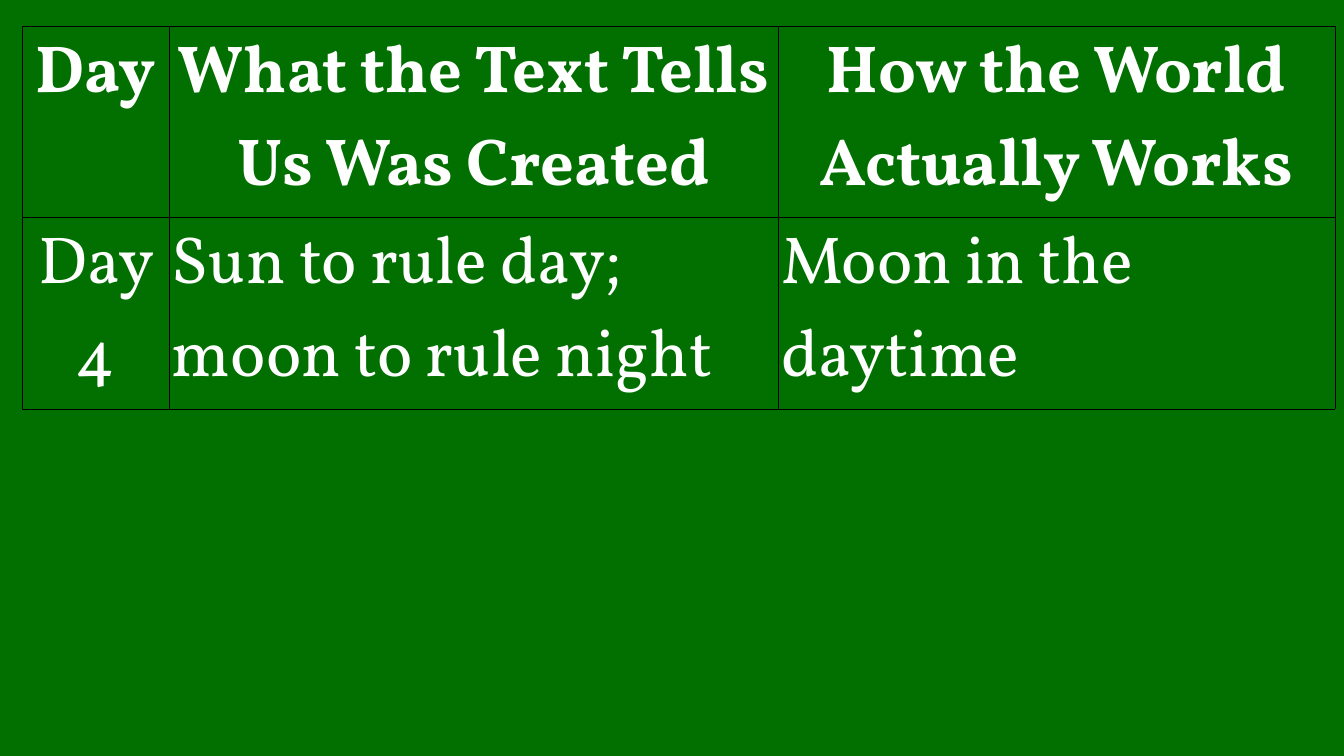
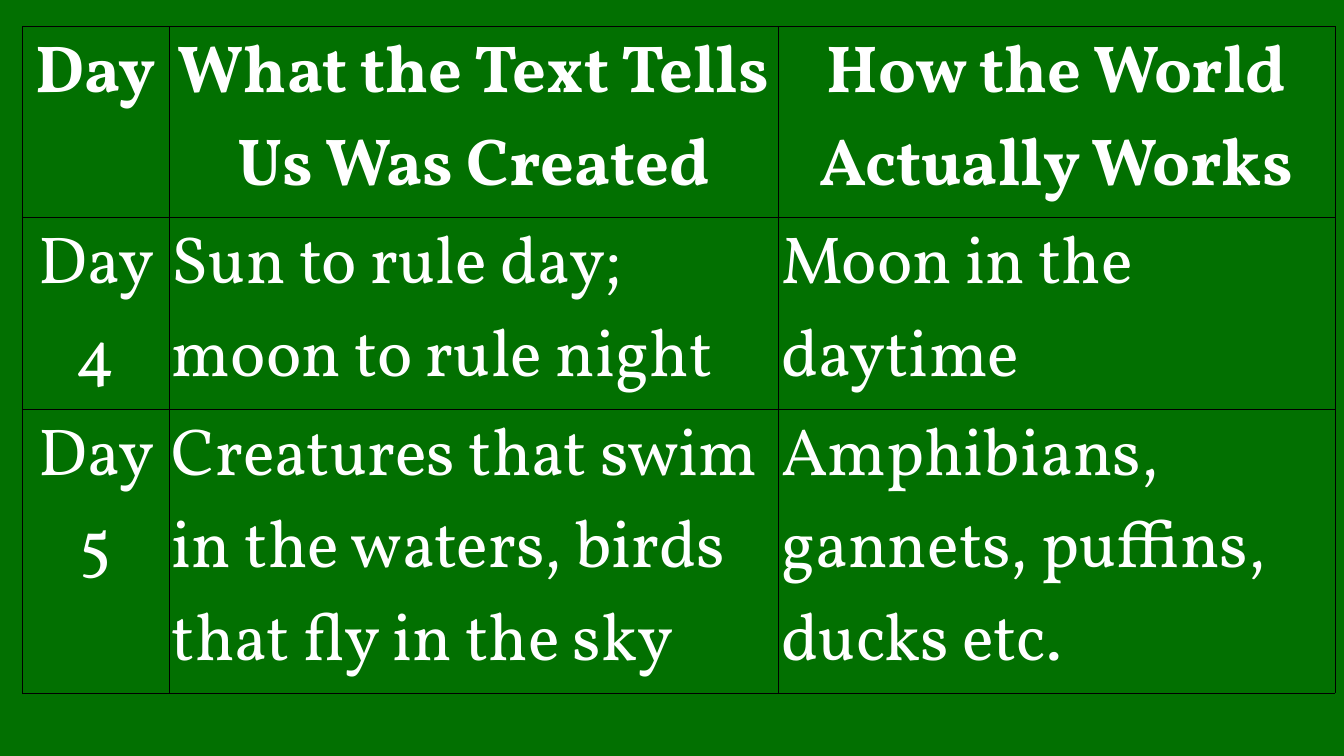
from lxml.etree import SubElement
from pptx import Presentation
from pptx.dml.color import RGBColor
from pptx.enum.text import PP_ALIGN as Align
from pptx.oxml.ns import qn
from pptx.util import Inches, Pt

# Content
HEADER = ("Day", "What the Text Tells Us Was Created", "How the World Actually Works")
DAYS = [
    ("Day 4", "Sun to rule day; moon to rule night", "Moon in the daytime"),
    ("Day 5", "Creatures that swim in the waters, birds that fly in the sky",
     "Amphibians, gannets, puffins, ducks etc."),
]

# Shared look, lengths in inches
SLIDE_WIDTH, SLIDE_HEIGHT = 26.67, 15
TABLE_LEFT, TABLE_TOP = 0.44, 0.52
COLUMN_WIDTHS = (2.91, 12.09, 11.05)
ROW_HEIGHTS = (2.14, 2.14, 2.18)
CELL_MARGIN = 0.06
GREEN, WHITE, BLACK = "027001", "FFFFFF", "000000"
FONT, FONT_SIZE = "Vollkorn", 95
BORDER_WIDTH = 0.35


def color(value):
    return RGBColor.from_string(value)


def paint(fill, value):
    fill.solid()
    fill.fore_color.rgb = color(value)


def add_borders(cell):
    properties = cell._tc.get_or_add_tcPr()
    for position, side in enumerate(("lnL", "lnR", "lnT", "lnB")):
        line = SubElement(properties, qn(f"a:{side}"), w=str(Pt(BORDER_WIDTH)))
        solid = SubElement(line, qn("a:solidFill"))
        SubElement(solid, qn("a:srgbClr"), val=BLACK)
        properties.insert(position, line)  # borders come before the fill


def fill_cell(cell, text, bold, align):
    cell.margin_left = cell.margin_right = Inches(CELL_MARGIN)
    cell.margin_top = cell.margin_bottom = Inches(CELL_MARGIN)
    paint(cell.fill, GREEN)
    add_borders(cell)
    paragraph = cell.text_frame.paragraphs[0]
    paragraph.alignment = align
    run = paragraph.add_run()
    run.text = text
    run.font.name, run.font.size, run.font.bold = FONT, Pt(FONT_SIZE), bold
    run.font.color.rgb = color(WHITE)


def add_day_slide(presentation, days):
    slide = presentation.slides.add_slide(presentation.slide_layouts[6])
    paint(slide.background.fill, GREEN)
    rows = [HEADER, *days]
    heights = ROW_HEIGHTS[:len(rows)]
    table = slide.shapes.add_table(
        len(rows), len(HEADER), Inches(TABLE_LEFT), Inches(TABLE_TOP),
        Inches(sum(COLUMN_WIDTHS)), Inches(sum(heights))).table
    for column, width in zip(table.columns, COLUMN_WIDTHS):
        column.width = Inches(width)
    for row, height in zip(table.rows, heights):
        row.height = Inches(height)
    for row_index, texts in enumerate(rows):
        for column_index, text in enumerate(texts):
            is_header = row_index == 0
            centred = is_header or column_index == 0
            fill_cell(table.cell(row_index, column_index), text, is_header,
                      Align.CENTER if centred else Align.LEFT)


def main():
    presentation = Presentation()
    presentation.slide_width = Inches(SLIDE_WIDTH)
    presentation.slide_height = Inches(SLIDE_HEIGHT)
    # Each slide reveals one more day
    for count in range(1, len(DAYS) + 1):
        add_day_slide(presentation, DAYS[:count])
    presentation.save("out.pptx")


if __name__ == "__main__":
    main()
